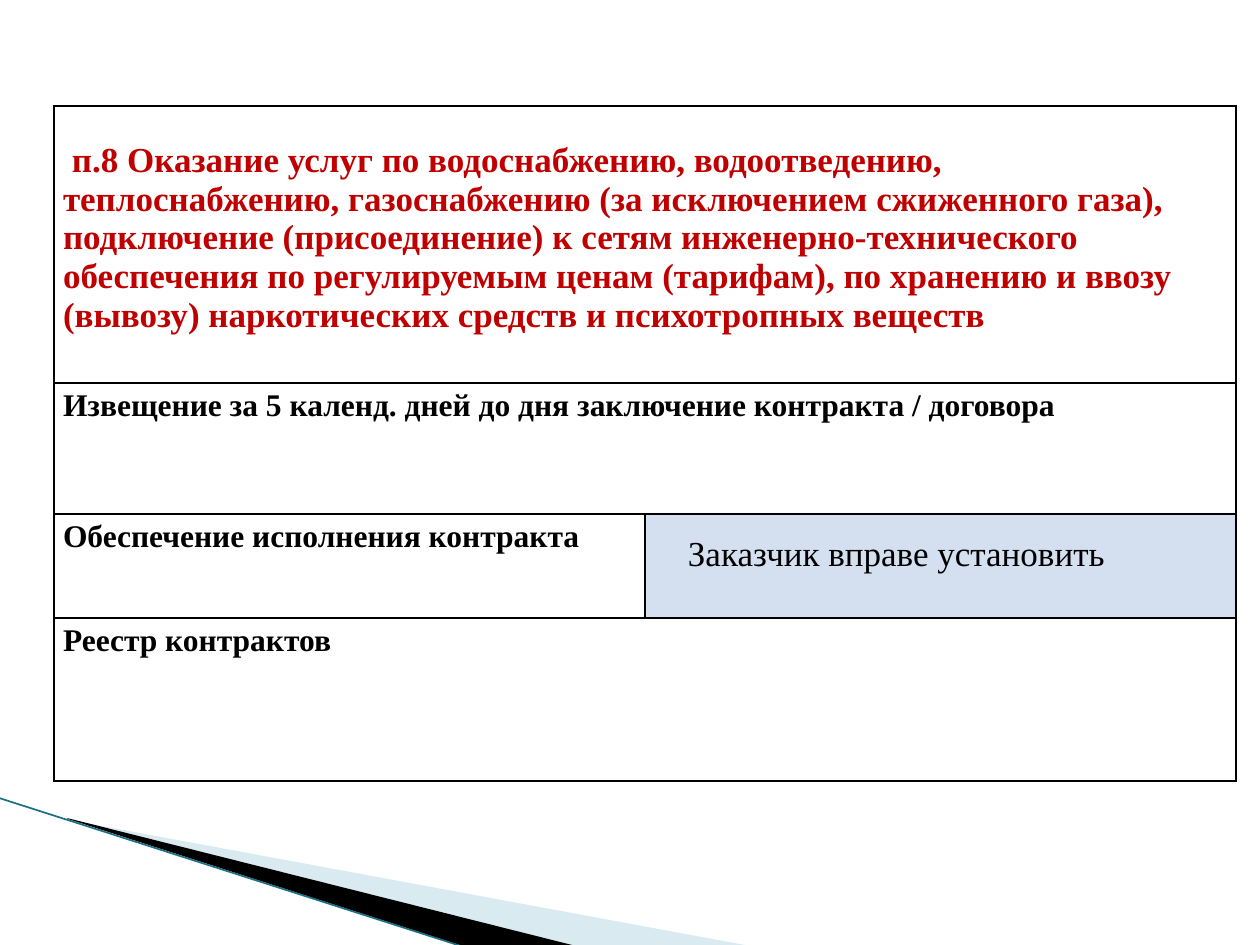
from lxml import etree
from pptx import Presentation
from pptx import util as u
from pptx.dml.color import RGBColor
from pptx.enum import shapes, text
from pptx.oxml.ns import qn

PX = 914400 / 126
FONT = "Times New Roman"
COLORS = {"ink": "000000", "red": "C00000", "pale": "A0CBDC",
          "teal": "1B6F82", "cell": "D4DFEF"}


def px(length):
    return u.Emu(round(length * PX))


def color(name):
    return RGBColor.from_string(COLORS[name])


def write(frame, words, size=18, ink="ink", bold=True, align=text.PP_ALIGN.LEFT,
          spacing=None, indent=0):
    para = frame.paragraphs[0]
    para.alignment = align
    if spacing:
        para.line_spacing = spacing
    if indent:
        para._p.get_or_add_pPr().set("indent", str(px(indent)))
    span = para.add_run()
    span.text = words
    span.font.name = FONT
    span.font.size = u.Pt(size)
    span.font.bold = bold
    span.font.color.rgb = color(ink)


class SlideBuilder:
    def __init__(self, slide):
        self.slide = slide

    def wedge(self, points, fill, opacity=100):
        builder = self.slide.shapes.build_freeform(*points[0], scale=PX)
        builder.add_line_segments(points[1:], close=True)
        shape = builder.convert_to_shape()
        shape.shadow.inherit = False
        shape.line.fill.background()
        shape.fill.solid()
        shape.fill.fore_color.rgb = color(fill)
        if opacity < 100:
            tint = shape._element.spPr.find(".//" + qn("a:srgbClr"))
            etree.SubElement(tint, qn("a:alpha"), val=str(opacity * 1000))

    def line(self, start, end, ink, width):
        connector = self.slide.shapes.add_connector(
            shapes.MSO_CONNECTOR.STRAIGHT, *map(px, start + end))
        connector.line.color.rgb = color(ink)
        connector.line.width = u.Pt(width)
        etree.SubElement(connector._element.spPr, qn("a:effectLst"))

    def table(self, left, top, columns, rows):
        """Add a table whose cells are transparent with thin borders."""
        frame = self.slide.shapes.add_table(
            len(rows), len(columns), px(left), px(top), px(sum(columns)), px(sum(rows)))
        table = frame.table
        table.first_row = table.horz_banding = False
        for column, width in zip(table.columns, columns):
            column.width = px(width)
        for row, height in zip(table.rows, rows):
            row.height = px(height)
        for cell in table.iter_cells():
            self.border(cell)
            cell.fill.background()
        return table

    def border(self, cell):
        properties = cell._tc.get_or_add_tcPr()
        for side in ("lnL", "lnR", "lnT", "lnB"):
            edge = etree.SubElement(properties, qn("a:" + side), w=str(u.Pt(1)))
            fill = etree.SubElement(edge, qn("a:solidFill"))
            etree.SubElement(fill, qn("a:srgbClr"), val=COLORS["ink"])

    def cell(self, cell, words, top=0, right=9, fill=None, **style):
        cell.margin_left, cell.margin_right = px(9), px(right)
        cell.margin_top, cell.margin_bottom = px(top), 0
        if fill:
            cell.fill.solid()
            cell.fill.fore_color.rgb = color(fill)
        write(cell.text_frame, words, **style)


def main():
    deck = Presentation()
    deck.slide_width, deck.slide_height = px(1260), px(945)
    page = SlideBuilder(deck.slides.add_slide(deck.slide_layouts[6]))

    page.wedge([(69, 820), (750, 946), (575, 946), (69, 819)], "pale", opacity=40)
    page.wedge([(67, 818), (576, 946), (469, 948), (68, 819)], "ink")
    page.line((-1, 798), (467, 948), "teal", 0.95)

    table = page.table(54, 106, [591, 591], [277, 131, 104, 163])
    for row in (0, 1, 3):
        table.cell(row, 0).merge(table.cell(row, 1))

    page.cell(table.cell(0, 0),
              "п.8 Оказание услуг по водоснабжению, водоотведению, теплоснабжению, "
              "газоснабжению (за исключением сжиженного газа), подключение "
              "(присоединение) к сетям инженерно-технического обеспечения по "
              "регулируемым ценам (тарифам), по хранению и ввозу (вывозу) "
              "наркотических средств и психотропных веществ",
              top=35, size=20, ink="red", indent=9)
    labels = ["Извещение за 5 календ. дней до дня заключение контракта / договора",
              "Обеспечение исполнения контракта",
              "Реестр контрактов"]
    for row, label in enumerate(labels, start=1):
        page.cell(table.cell(row, 0), label, spacing=1.15)
    page.cell(table.cell(2, 1), "Заказчик вправе установить", top=21, right=97,
              fill="cell", size=20, bold=False, align=text.PP_ALIGN.CENTER)

    deck.save("out.pptx")


if __name__ == "__main__":
    main()
